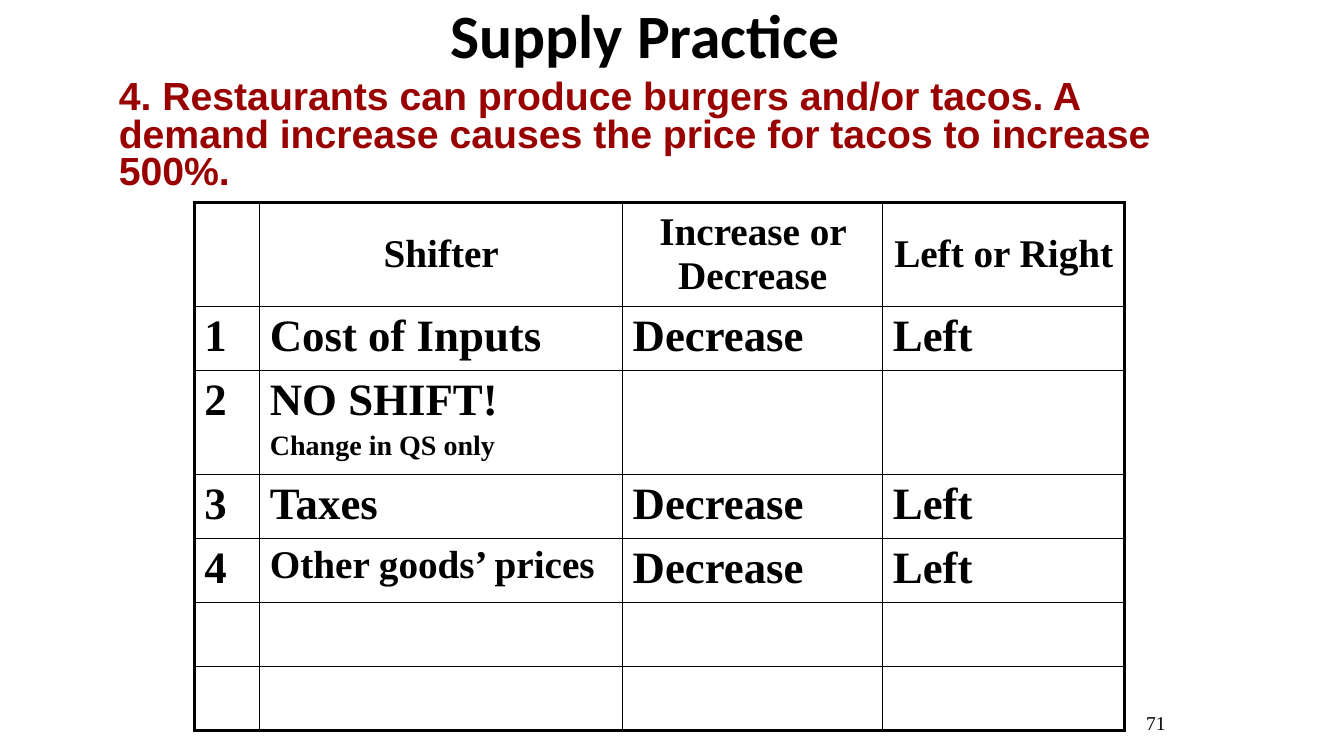
from typing import NamedTuple

from lxml.etree import SubElement
from pptx import Presentation
from pptx.dml.color import RGBColor
from pptx.enum.text import MSO_ANCHOR as Anchor, MSO_AUTO_SIZE as AutoSize, PP_ALIGN as Align
from pptx.oxml.ns import qn
from pptx.util import Inches, Pt

WIDTH, HEIGHT = Inches(13.33), Inches(7.5)
BLACK, RED = "000000", "990000"
SERIF = "Times New Roman"
THIN, THICK = 1, 2.25
COLUMNS = (4.88, 27, 19.36, 18)
SHORT_ROW, TALL_ROW = 8.47, 13.73
TALL_ROWS = (0, 2)


class Area(NamedTuple):
    """A rectangle in percent of the slide's width and height."""
    left: float
    top: float
    width: float
    height: float


class Style(NamedTuple):
    """The look of a paragraph."""
    size: float
    font: str = SERIF
    color: str = BLACK
    bold: bool = True
    align: Align = Align.LEFT
    spacing: float = 1.0


class Line(NamedTuple):
    """One paragraph of text and its style."""
    text: str
    style: Style


HEAD = Style(28, align=Align.CENTER)
ANSWER, SMALL_ANSWER, NOTE = Style(32), Style(28), Style(20)
TITLE = Line("Supply Practice", Style(44, "Calibri", spacing=0.9))
QUESTION = Line("4. Restaurants can produce burgers and/or tacos. A demand increase "
                "causes the price for tacos to increase 500%.",
                Style(28, "Arial", RED, spacing=0.8))
PAGE_NUMBER = Line("71", Style(14, bold=False, align=Align.RIGHT))

TITLE_AREA = Area(33.16, -3.2, 63.77, 16.67)
QUESTION_AREA = Area(8.1, 10, 79.37, 16.4)
NUMBER_AREA = Area(71.87, 93.33, 15.6, 6.67)
TABLE_AREA = Area(14.45, 26.75, sum(COLUMNS), 2 * TALL_ROW + 5 * SHORT_ROW)


def answer_row(*texts: str) -> list[list[Line]]:
    """Return a row of answers with one large line per filled cell."""
    return [[Line(text, ANSWER)] if text else [] for text in texts]


ROWS = [
    [[]] + [[Line(text, HEAD)] for text in ("Shifter", "Increase or Decrease", "Left or Right")],
    answer_row("1", "Cost of Inputs", "Decrease", "Left"),
    answer_row("2", "NO SHIFT!", "", ""),
    answer_row("3", "Taxes", "Decrease", "Left"),
    answer_row("4", "", "Decrease", "Left"),
    answer_row("", "", "", ""),
    answer_row("", "", "", ""),
]
ROWS[2][1].append(Line("Change in QS only", NOTE))
ROWS[4][1].append(Line("Other goods’ prices", SMALL_ANSWER))


def paint(color: str) -> RGBColor:
    """Turn a hex string into a colour."""
    return RGBColor.from_string(color)


def across(share: float) -> int:
    """Turn a percentage of the slide's width into a length."""
    return round(WIDTH * share / 100)


def down(share: float) -> int:
    """Turn a percentage of the slide's height into a length."""
    return round(HEIGHT * share / 100)


def lengths(area: Area) -> tuple[int, int, int, int]:
    """Return left, top, width and height of an area."""
    return across(area.left), down(area.top), across(area.width), down(area.height)


def assign(target, values: dict) -> None:
    """Set every attribute named in a dict of format values."""
    for name, value in values.items():
        setattr(target, name, value)


def write(frame, lines: list[Line]) -> None:
    """Write styled paragraphs into a text frame."""
    for index, (text, style) in enumerate(lines):
        para = frame.add_paragraph() if index else frame.paragraphs[0]
        assign(para, {"alignment": style.align, "line_spacing": style.spacing,
                      "space_before": Pt(style.size * 0.2 if index else 0)})
        span = para.add_run()
        span.text = text
        assign(span.font, {"name": style.font, "size": Pt(style.size), "bold": style.bold})
        span.font.color.rgb = paint(style.color)


def add_text(page, area: Area, line: Line) -> None:
    """Add a wrapped text box with one paragraph."""
    box = page.shapes.add_textbox(*lengths(area))
    box.text_frame.word_wrap = True
    write(box.text_frame, [line])


def add_title(page) -> None:
    """Place and fill the title placeholder."""
    title = page.shapes.title
    assign(title, dict(zip(("left", "top", "width", "height"), lengths(TITLE_AREA))))
    margins = {f"margin_{side}": Inches(0.05) for side in ("left", "top", "right", "bottom")}
    assign(title.text_frame, {"vertical_anchor": Anchor.MIDDLE, "word_wrap": True,
                              "auto_size": AutoSize.NONE, **margins})
    write(title.text_frame, [TITLE])


def set_borders(cell, widths: dict[str, float]) -> None:
    """Draw the cell's black borders with the given widths in points."""
    properties = cell._tc.get_or_add_tcPr()
    for side, width in widths.items():
        border = SubElement(properties, qn(f"a:ln{side}"), w=str(Pt(width)))
        fill = SubElement(border, qn("a:solidFill"))
        SubElement(fill, qn("a:srgbClr"), val=BLACK)


def add_shifter_table(page) -> None:
    """Add the table of shifters with a thick outer frame."""
    table = page.shapes.add_table(len(ROWS), len(COLUMNS), *lengths(TABLE_AREA)).table
    assign(table, {"first_row": False, "horz_banding": False})
    for column, share in zip(table.columns, COLUMNS):
        column.width = across(share)
    for r, row in enumerate(ROWS):
        table.rows[r].height = down(TALL_ROW if r in TALL_ROWS else SHORT_ROW)
        for c, lines in enumerate(row):
            cell = table.cell(r, c)
            edges = {"L": c == 0, "R": c == len(COLUMNS) - 1, "T": r == 0, "B": r == len(ROWS) - 1}
            set_borders(cell, {side: THICK if outer else THIN for side, outer in edges.items()})
            cell.fill.background()
            cell.vertical_anchor = Anchor.TOP if r else Anchor.MIDDLE
            write(cell.text_frame, lines)


def main() -> None:
    """Build the deck and save it."""
    deck = Presentation()
    assign(deck, {"slide_width": WIDTH, "slide_height": HEIGHT})
    page = deck.slides.add_slide(deck.slide_layouts.get_by_name("Title Only"))
    add_title(page)
    add_text(page, QUESTION_AREA, QUESTION)
    add_text(page, NUMBER_AREA, PAGE_NUMBER)
    add_shifter_table(page)
    deck.save("out.pptx")


if __name__ == "__main__":
    main()
